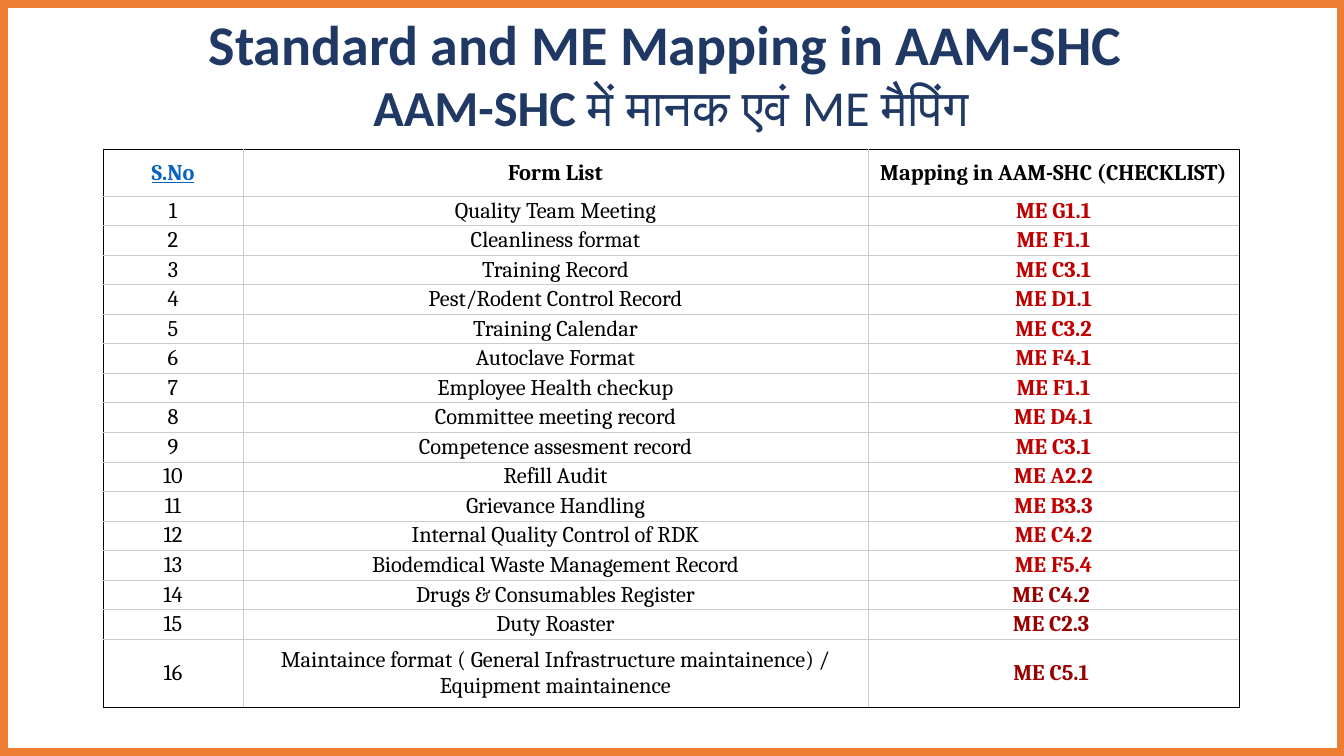
from dataclasses import dataclass

from lxml.etree import SubElement
from pptx import Presentation
from pptx.dml.color import RGBColor
from pptx.enum.shapes import MSO_SHAPE
from pptx.enum.text import MSO_ANCHOR, MSO_AUTO_SIZE, PP_ALIGN
from pptx.oxml import parse_xml
from pptx.oxml.ns import nsdecls, qn
from pptx.slide import Slide
from pptx.table import _Cell
from pptx.text.text import _Paragraph
from pptx.util import Pt

COLORS = {
    "frame": "ED7D31",
    "title": "203864",
    "link": "0563C1",
    "text": "000000",
    "code": "C00000",
    "late_code": "980000",
    "grid": "CCCCCC",
    "outline": "000000",
}

COLUMN_WIDTHS = (100, 446.5, 265)
HEADER_HEIGHT, ROW_HEIGHT, LAST_HEIGHT = 33.4, 21.1, 49
HEADINGS = ("S.No", "Form List", "Mapping in AAM-SHC (CHECKLIST)")
FORMS = (
    ("Quality Team Meeting", "ME G1.1"),
    ("Cleanliness format", "ME F1.1"),
    ("Training Record", "ME C3.1"),
    ("Pest/Rodent Control Record", "ME D1.1"),
    ("Training Calendar", "ME C3.2"),
    ("Autoclave Format", "ME F4.1"),
    ("Employee Health checkup", "ME F1.1"),
    ("Committee meeting record", "ME D4.1"),
    ("Competence assesment record", "ME C3.1"),
    ("Refill Audit", "ME A2.2"),
    ("Grievance Handling", "ME B3.3"),
    ("Internal Quality Control of RDK", "ME C4.2"),
    ("Biodemdical Waste Management Record", "ME F5.4"),
    ("Drugs & Consumables Register", "ME C4.2 "),
    ("Duty Roaster", "ME C2.3 "),
    ("Maintaince format ( General Infrastructure maintainence) / Equipment maintainence", "ME C5.1 "),
)
FIRST_LATE_FORM = 14


@dataclass(frozen=True)
class Span:
    text: str
    size: float = 16
    color: str = "text"
    bold: bool = False
    underline: bool = False
    font: str = "Cambria"


TITLE_LINES = (
    (Span("Standard and ME Mapping in AAM-SHC ", 40, "title", True, font="Calibri"),),
    (
        Span("AAM-SHC ", 36, "title", True, font="Calibri"),
        Span("में मानक एवं ME मैपिंग", 36, "title", font="Calibri"),
    ),
)


def add_span(para: _Paragraph, span: Span) -> None:
    run = para.add_run()
    run.text = span.text
    font = run.font
    font.name = span.font
    font.size = Pt(span.size)
    font.bold = span.bold
    font.underline = span.underline
    font.color.rgb = RGBColor.from_string(COLORS[span.color])


def add_frame(slide: Slide) -> None:
    frame = slide.shapes.add_shape(MSO_SHAPE.FRAME, Pt(0), Pt(0), Pt(961), Pt(540))
    frame.adjustments[0] = 0.01
    frame.shadow.inherit = False
    color = RGBColor.from_string(COLORS["frame"])
    frame.fill.solid()
    frame.fill.fore_color.rgb = color
    frame.line.color.rgb = color
    frame.line.width = Pt(1)


def fill_title(slide: Slide) -> None:
    title = slide.shapes.title
    title.left, title.top, title.width, title.height = Pt(23), Pt(2.9), Pt(913), Pt(99.5)
    box = title.text_frame
    box.word_wrap = True
    box.auto_size = MSO_AUTO_SIZE.SHAPE_TO_FIT_TEXT
    box.vertical_anchor = MSO_ANCHOR.TOP
    for index, spans in enumerate(TITLE_LINES):
        para = box.add_paragraph() if index else box.paragraphs[0]
        para.alignment = PP_ALIGN.CENTER
        for span in spans:
            add_span(para, span)


def set_borders(cell: _Cell, outer_sides: dict[str, bool]) -> None:
    properties = cell._tc.get_or_add_tcPr()
    for index, (side, outer) in enumerate(outer_sides.items()):
        border = parse_xml(f'<a:ln{side} {nsdecls("a")} w="{Pt(0.6)}"/>')
        fill = SubElement(border, qn("a:solidFill"))
        SubElement(fill, qn("a:srgbClr"), val=COLORS["outline" if outer else "grid"])
        properties.insert(index, border)


def fill_cell(cell: _Cell, span: Span) -> None:
    cell.fill.background()
    cell.vertical_anchor = MSO_ANCHOR.MIDDLE
    cell.margin_left = cell.margin_right = Pt(1.44)
    cell.margin_top = cell.margin_bottom = Pt(0.72)
    para = cell.text_frame.paragraphs[0]
    para.alignment = PP_ALIGN.CENTER
    add_span(para, span)


def table_rows() -> list[tuple[Span, ...]]:
    number, form, mapping = HEADINGS
    rows = [(
        Span(number, color="link", bold=True, underline=True),
        Span(form, bold=True),
        Span(mapping, bold=True),
    )]
    for index, (name, code) in enumerate(FORMS, start=1):
        code_color = "late_code" if index >= FIRST_LATE_FORM else "code"
        rows.append((Span(str(index)), Span(name), Span(code, color=code_color, bold=True)))
    return rows


def add_form_table(slide: Slide) -> None:
    rows = table_rows()
    heights = [HEADER_HEIGHT] + [ROW_HEIGHT] * (len(rows) - 2) + [LAST_HEIGHT]
    table = slide.shapes.add_table(
        len(rows), len(COLUMN_WIDTHS), Pt(73.6), Pt(106.7),
        Pt(sum(COLUMN_WIDTHS)), Pt(sum(heights)),
    ).table
    table.first_row = False
    table.horz_banding = False
    for column, width in zip(table.columns, COLUMN_WIDTHS):
        column.width = Pt(width)
    last_row, last_column = len(rows) - 1, len(COLUMN_WIDTHS) - 1
    for row_index, spans in enumerate(rows):
        table.rows[row_index].height = Pt(heights[row_index])
        for column_index, span in enumerate(spans):
            cell = table.cell(row_index, column_index)
            fill_cell(cell, span)
            set_borders(cell, {
                "L": column_index == 0,
                "R": column_index == last_column,
                "T": row_index == 0,
                "B": row_index == last_row,
            })


def main() -> None:
    deck = Presentation()
    deck.slide_width, deck.slide_height = Pt(960), Pt(540)
    page = deck.slides.add_slide(deck.slide_layouts[5])
    add_frame(page)
    add_form_table(page)
    fill_title(page)
    deck.save("out.pptx")


if __name__ == "__main__":
    main()
